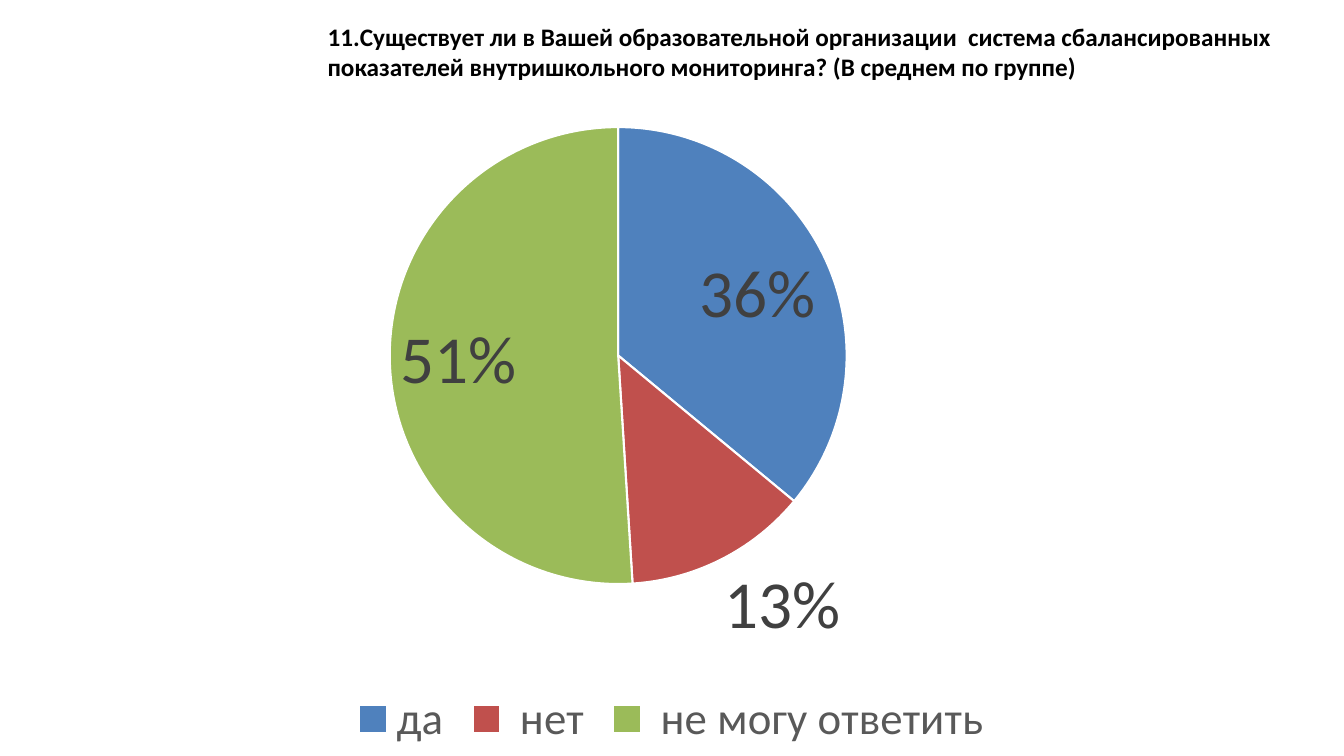
from dataclasses import dataclass

from lxml import etree
from pptx import Presentation
from pptx.chart.data import CategoryChartData
from pptx.dml.color import RGBColor
from pptx.enum.chart import XL_CHART_TYPE, XL_LABEL_POSITION, XL_LEGEND_POSITION
from pptx.enum.text import MSO_ANCHOR, PP_ALIGN
from pptx.oxml.ns import qn
from pptx.util import Cm, Pt

PIE = XL_CHART_TYPE.PIE
BEST_FIT = XL_LABEL_POSITION.BEST_FIT
BOTTOM = XL_LEGEND_POSITION.BOTTOM
TOP = MSO_ANCHOR.TOP
LEFT = PP_ALIGN.LEFT

FONT = "Calibri"
TITLE_ONLY = 5
QUESTION = (
    "11.Существует ли в Вашей образовательной организации  система "
    "сбалансированных показателей внутришкольного мониторинга? "
    "(В среднем по группе)"
)


@dataclass
class Answer:
    label: str
    share: int
    color: str


ANSWERS = [
    Answer("да", 36, "4F81BD"),
    Answer(" нет", 13, "C0504D"),
    Answer(" не могу ответить", 51, "9BBB59"),
]


def rgb(color: str) -> RGBColor:
    return RGBColor.from_string(color)


def style_font(font, size: float, color: str, bold: bool = False) -> None:
    font.name = FONT
    font.size = Pt(size)
    font.bold = bold
    font.color.rgb = rgb(color)


def add_question(page) -> None:
    title = page.shapes.title
    title.left, title.top = Cm(8), Cm(0.41)
    title.width, title.height = Cm(25.2), Cm(2.57)
    frame = title.text_frame
    frame.text = QUESTION
    frame.word_wrap = True
    frame.vertical_anchor = TOP
    para = frame.paragraphs[0]
    para.alignment = LEFT
    para.line_spacing = 1
    style_font(para.runs[0].font, 18, "000000", bold=True)


def place_plot(chart, **fractions: float) -> None:
    """Fix the inner plot area; x, y, w and h are fractions of the chart."""
    plot_area = chart.plots[0]._element.getparent()
    for old in plot_area.findall(qn("c:layout")):
        plot_area.remove(old)
    layout = etree.Element(qn("c:layout"))
    manual = etree.SubElement(layout, qn("c:manualLayout"))
    settings = {"layoutTarget": "inner", "xMode": "edge", "yMode": "edge", **fractions}
    for name, value in settings.items():
        etree.SubElement(manual, qn(f"c:{name}")).set("val", str(value))
    plot_area.insert(0, layout)


def add_answer_pie(page) -> None:
    data = CategoryChartData()
    data.categories = [answer.label for answer in ANSWERS]
    data.add_series("Series 1", [answer.share for answer in ANSWERS])
    frame = page.shapes.add_chart(PIE, Cm(0), Cm(2.51), Cm(33.87), Cm(16.54), data)
    chart = frame.chart
    chart.has_title = False
    style_font(chart.font, 10, "000000")
    place_plot(chart, x=0.29, y=0.04, w=0.34, h=0.7)

    chart.has_legend = True
    chart.legend.position = BOTTOM
    chart.legend.include_in_layout = False
    style_font(chart.legend.font, 32, "595959")

    plot = chart.plots[0]
    plot.vary_by_categories = True
    for index, answer in enumerate(ANSWERS):
        slice_format = plot.series[0].points[index].format
        slice_format.fill.solid()
        slice_format.fill.fore_color.rgb = rgb(answer.color)
        slice_format.line.color.rgb = rgb("FFFFFF")
        slice_format.line.width = Pt(1.5)

    plot.has_data_labels = True
    labels = plot.data_labels
    labels.show_value = False
    labels.show_percentage = True
    labels.number_format = "0%"
    labels.number_format_is_linked = False
    labels.position = BEST_FIT
    style_font(labels.font, 48, "404040")


def main() -> None:
    deck = Presentation()
    deck.slide_width, deck.slide_height = Cm(33.87), Cm(19.05)
    page = deck.slides.add_slide(deck.slide_layouts[TITLE_ONLY])
    add_question(page)
    add_answer_pie(page)
    deck.save("out.pptx")


if __name__ == "__main__":
    main()
